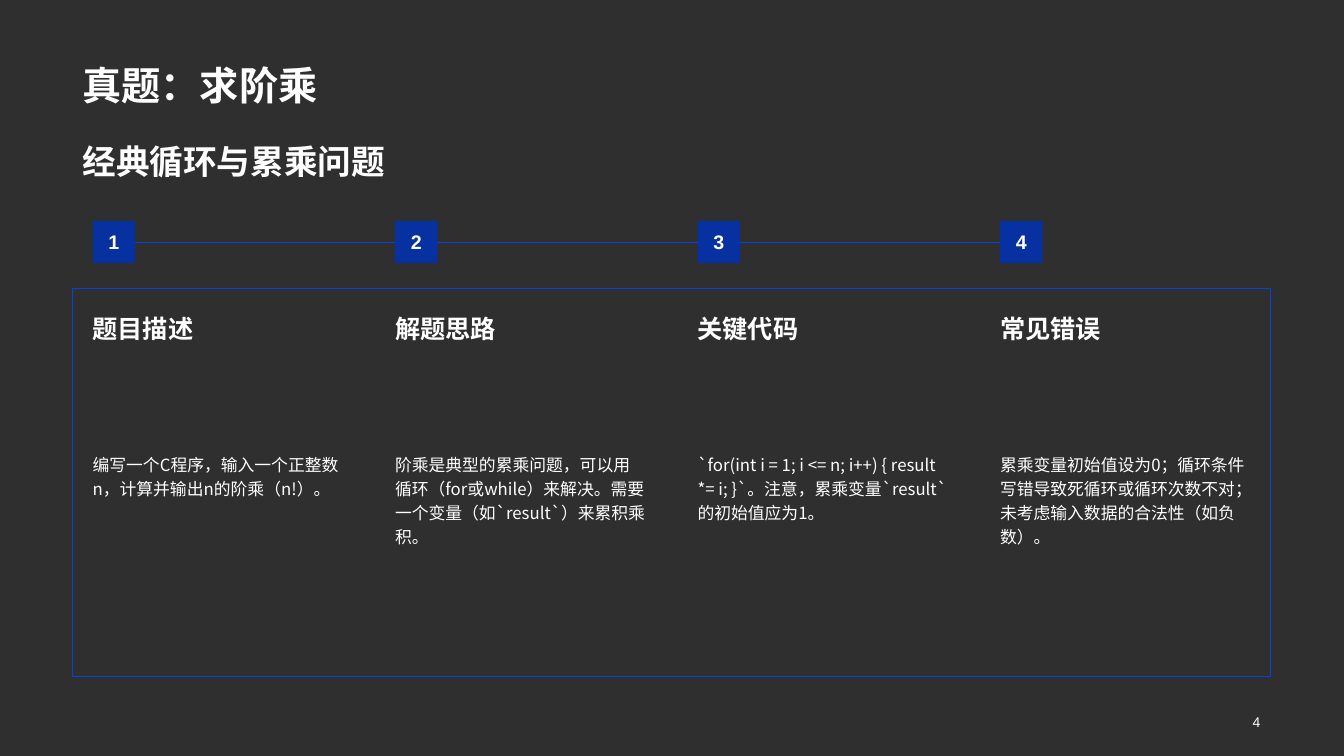
from dataclasses import dataclass

from lxml import etree
from pptx import Presentation
from pptx.dml.color import RGBColor
from pptx.enum.shapes import MSO_CONNECTOR, MSO_SHAPE
from pptx.enum.text import MSO_ANCHOR, PP_ALIGN
from pptx.oxml.ns import qn
from pptx.shapes.autoshape import Shape
from pptx.slide import Slide
from pptx.util import Emu, Pt

PX = 9144  # EMU per px, 100 px to the inch

BACKGROUND = RGBColor(0x2F, 0x2F, 0x2F)
WHITE = RGBColor(0xFF, 0xFF, 0xFF)
LINE_BLUE = RGBColor(0x07, 0x42, 0xDF)
BADGE_BLUE = RGBColor(0x05, 0x31, 0xA7)

CJK_FONT = "Noto Sans CJK SC"
NUMBER_FONT = "Arial"

LEFT, RIGHT, CENTER = PP_ALIGN.LEFT, PP_ALIGN.RIGHT, PP_ALIGN.CENTER
TOP, MIDDLE, BOTTOM = MSO_ANCHOR.TOP, MSO_ANCHOR.MIDDLE, MSO_ANCHOR.BOTTOM
RECTANGLE, ROUNDED = MSO_SHAPE.RECTANGLE, MSO_SHAPE.ROUNDED_RECTANGLE
STRAIGHT = MSO_CONNECTOR.STRAIGHT

# Layout
MARGIN, CONTENT_WIDTH = 72, 1188
STEP_LEFT, STEP_PITCH = 82, 300
BADGE_INSET, BADGE_TOP, BADGE_SIZE = 10, 219, 42


@dataclass(frozen=True)
class Box:
    left: int
    top: int
    width: int
    height: int

    def emu(self) -> list[Emu]:
        return [Emu(n * PX) for n in (self.left, self.top, self.width, self.height)]


@dataclass(frozen=True)
class Step:
    heading: str
    body: str


STEPS = [
    Step("题目描述", "编写一个C程序，输入一个正整数n，计算并输出n的阶乘（n!）。"),
    Step("解题思路", "阶乘是典型的累乘问题，可以用循环（for或while）来解决。"
                 "需要一个变量（如`result`）来累积乘积。"),
    Step("关键代码", "`for(int i = 1; i <= n; i++) { result *= i; }`。"
                 "注意，累乘变量`result`的初始值应为1。"),
    Step("常见错误", "累乘变量初始值设为0；循环条件写错导致死循环或循环次数不对；"
                 "未考虑输入数据的合法性（如负数）。"),
]


def write_text(shape: Shape, text: str, *, size: int, font: str = CJK_FONT,
               bold: bool = False, align: PP_ALIGN = LEFT,
               anchor: MSO_ANCHOR = TOP, spacing: float = 1.0,
               wrap: bool = True) -> None:
    """Fill a shape with one formatted paragraph."""
    frame = shape.text_frame
    frame.word_wrap = wrap
    frame.vertical_anchor = anchor
    paragraph = frame.paragraphs[0]
    paragraph.alignment = align
    paragraph.line_spacing = spacing
    run = paragraph.add_run()
    run.text = text
    run.font.size = Pt(size)
    run.font.bold = bold
    run.font.color.rgb = WHITE
    run.font.name = font
    latin = run.font._element.find(qn("a:latin"))
    east_asian = etree.Element(qn("a:ea"), typeface=font)
    latin.addnext(east_asian)


def add_text(slide: Slide, box: Box, text: str, **text_format) -> None:
    write_text(slide.shapes.add_textbox(*box.emu()), text, **text_format)


def add_timeline(slide: Slide) -> None:
    start = STEP_LEFT + BADGE_INSET + BADGE_SIZE
    end = STEP_LEFT + BADGE_INSET + STEP_PITCH * (len(STEPS) - 1)
    y = BADGE_TOP + BADGE_SIZE // 2
    timeline = slide.shapes.add_connector(
        STRAIGHT, *(Emu(n * PX) for n in (start, y, end, y)))
    timeline.line.color.rgb = LINE_BLUE
    timeline.line.width = Pt(0.5)
    etree.SubElement(timeline._element.spPr, qn("a:effectLst"))


def add_panel(slide: Slide) -> None:
    panel = slide.shapes.add_shape(ROUNDED, *Box(MARGIN, 286, CONTENT_WIDTH, 385).emu())
    panel.adjustments[0] = 0
    panel.shadow.inherit = False
    panel.fill.background()
    panel.line.color.rgb = LINE_BLUE
    panel.line.width = Pt(1)


def add_badge(slide: Slide, left: int, number: int) -> None:
    badge = slide.shapes.add_shape(
        RECTANGLE, *Box(left, BADGE_TOP, BADGE_SIZE, BADGE_SIZE).emu())
    badge.shadow.inherit = False
    badge.fill.solid()
    badge.fill.fore_color.rgb = BADGE_BLUE
    color = badge._element.spPr.find(qn("a:solidFill"))[0]
    etree.SubElement(color, qn("a:alpha"), val="95000")
    badge.line.fill.background()
    frame = badge.text_frame
    frame.margin_left = frame.margin_right = Emu(7 * PX)
    frame.margin_top = frame.margin_bottom = Emu(4 * PX)
    write_text(badge, str(number), size=14, font=NUMBER_FONT, bold=True,
               align=CENTER, anchor=MIDDLE, wrap=False)


def add_step(slide: Slide, index: int, step: Step) -> None:
    left = STEP_LEFT + index * STEP_PITCH
    add_badge(slide, left + BADGE_INSET, index + 1)
    add_text(slide, Box(left, 300, 270, 143), step.heading,
             size=18, bold=True, spacing=1.2)
    add_text(slide, Box(left, 442, 269, 220), step.body, size=12, spacing=1.2)


def main() -> None:
    presentation = Presentation()
    presentation.slide_width = Emu(1333 * PX)
    presentation.slide_height = Emu(750 * PX)
    slide = presentation.slides.add_slide(presentation.slide_layouts[6])
    slide.background.fill.solid()
    slide.background.fill.fore_color.rgb = BACKGROUND

    # Page number
    add_text(slide, Box(860, 701, 400, 30), "4", size=10, font=NUMBER_FONT,
             align=RIGHT, anchor=MIDDLE)

    # Title and subtitle
    add_text(slide, Box(MARGIN, 14, CONTENT_WIDTH, 98), "真题：求阶乘",
             size=28, bold=True, anchor=BOTTOM)
    add_text(slide, Box(MARGIN, 124, CONTENT_WIDTH, 71), "经典循环与累乘问题",
             size=24, bold=True, anchor=MIDDLE)

    # Numbered steps over the outlined panel
    add_timeline(slide)
    add_panel(slide)
    for index, step in enumerate(STEPS):
        add_step(slide, index, step)

    presentation.save("out.pptx")


if __name__ == "__main__":
    main()
